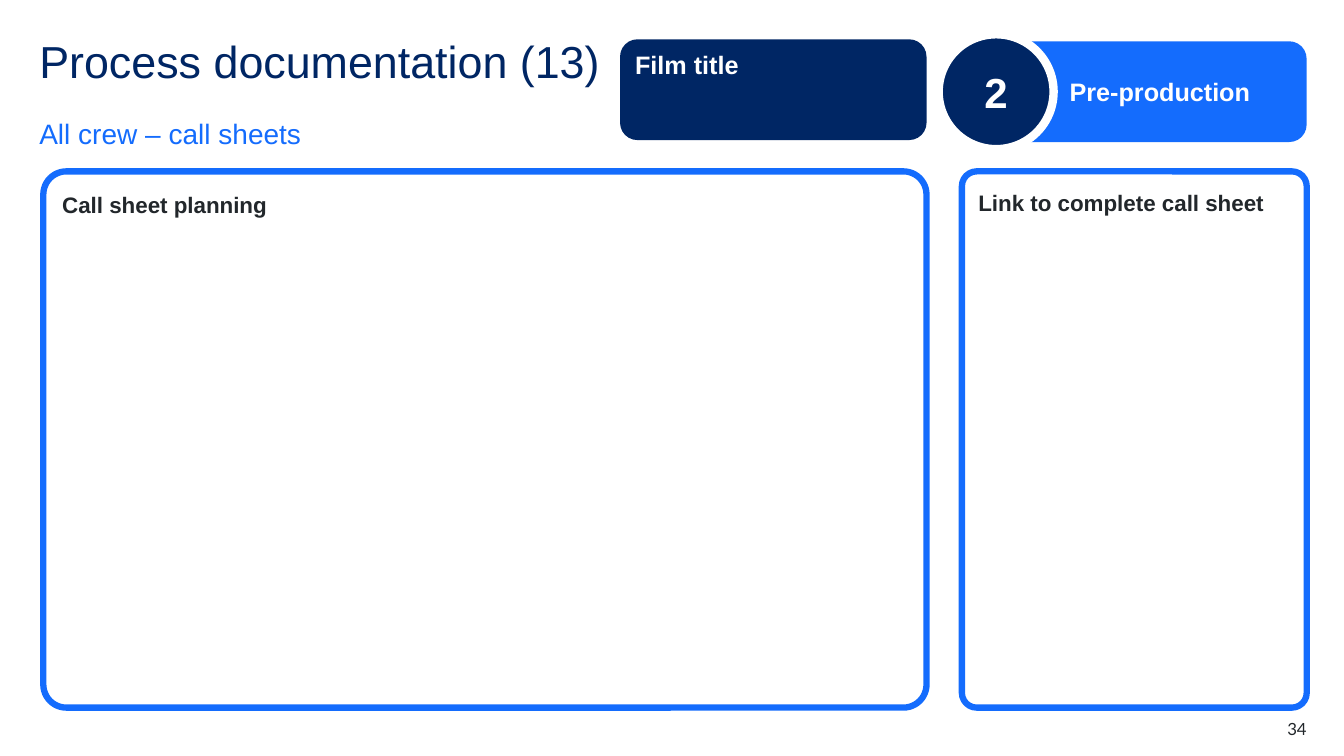
from pptx import Presentation
from pptx.dml.color import RGBColor
from pptx.enum.shapes import MSO_SHAPE
from pptx.enum.text import MSO_ANCHOR, PP_ALIGN
from pptx.util import Inches, Pt

# Content
TITLE = "Process documentation (13)"
SUBTITLE = "All crew – call sheets"
FILM = "Film title"
STAGE_NUMBER, STAGE = "2", "Pre-production"
PAGE = "34"
COLORS = {"navy": "002664", "blue": "146CFD", "ink": "22272B", "white": "FFFFFF"}

# Layout, in inches
WIDTH, HEIGHT = 13.33, 7.5
LEFT, RIGHT, TOP = 0.39, 12.96, 0.39
HEADING_W, BANNER_H = 5.63, 1
FILM_LEFT, FILM_RIGHT = 6.15, 9.19
STAGE_LEFT, STAGE_TOP = 10.06, 0.41
BADGE_LEFT, BADGE_SIZE = 9.31, 1.14
PANEL_TOP, PANEL_H = 1.7, 5.32
BANNER_ROUND, PANEL_ROUND = 0.173, 0.043
PANELS = [  # heading, left edge, right edge
    ("Call sheet planning", 0.43, FILM_RIGHT),
    ("Link to complete call sheet", 9.54, RIGHT),
]

prs = Presentation()
prs.slide_width, prs.slide_height = Inches(WIDTH), Inches(HEIGHT)
slide = prs.slides.add_slide(prs.slide_layouts[6])


def rgb(name):
    return RGBColor.from_string(COLORS[name])


def write(holder, text, size=18, color="white", bold=False, font="Arial",
          align=PP_ALIGN.LEFT, anchor=MSO_ANCHOR.TOP, inset=True,
          indent=0, spacing=None, before=0, after=0):
    frame = holder.text_frame
    frame.word_wrap = True
    frame.vertical_anchor = anchor
    if not inset:
        frame.margin_left = frame.margin_right = 0
        frame.margin_top = frame.margin_bottom = 0
    paragraph = frame.paragraphs[0]
    paragraph.alignment = align
    paragraph.line_spacing = spacing
    paragraph.space_before, paragraph.space_after = Pt(before), Pt(after)
    if indent:
        paragraph._p.get_or_add_pPr().set("marL", str(Inches(indent)))
    run = paragraph.add_run()
    run.text = text
    run.font.size, run.font.bold, run.font.name = Pt(size), bold, font
    run.font.color.rgb = rgb(color)


def text_area(left, top, width, height):
    return slide.shapes.add_textbox(*map(Inches, (left, top, width, height)))


def block(left, top, width, height, fill, rounding=None, line=None, line_width=0):
    kind = MSO_SHAPE.OVAL if rounding is None else MSO_SHAPE.ROUNDED_RECTANGLE
    shape = slide.shapes.add_shape(kind, *map(Inches, (left, top, width, height)))
    shape.shadow.inherit = False
    if rounding is not None:
        shape.adjustments[0] = rounding
    shape.fill.solid()
    shape.fill.fore_color.rgb = rgb(fill)
    if line:
        shape.line.color.rgb = rgb(line)
        shape.line.width = Pt(line_width)
    else:
        shape.line.fill.background()
    return shape


# Headings
write(text_area(LEFT, TOP, HEADING_W, 0.6), TITLE, size=32, color="navy",
      inset=False, spacing=0.9)
write(text_area(LEFT, 1.07, HEADING_W, 0.34), SUBTITLE, size=20, color="blue",
      inset=False, anchor=MSO_ANCHOR.MIDDLE, spacing=1.5, after=12)

# Film title banner
film = block(FILM_LEFT, TOP, FILM_RIGHT - FILM_LEFT, BANNER_H, "navy", BANNER_ROUND)
write(film, FILM, bold=True)

# Stage banner with its numbered badge
stage = block(STAGE_LEFT, STAGE_TOP, RIGHT - STAGE_LEFT, BANNER_H, "blue", BANNER_ROUND)
write(stage, STAGE, bold=True, anchor=MSO_ANCHOR.MIDDLE, indent=0.4)
badge_top = STAGE_TOP + (BANNER_H - BADGE_SIZE) / 2
badge = block(BADGE_LEFT, badge_top, BADGE_SIZE, BADGE_SIZE, "navy",
              line="white", line_width=6)
write(badge, STAGE_NUMBER, size=30, bold=True, align=PP_ALIGN.CENTER,
      anchor=MSO_ANCHOR.MIDDLE)

# Panels
for heading, left, right in PANELS:
    panel = block(left, PANEL_TOP, right - left, PANEL_H, "white", PANEL_ROUND,
                  line="blue", line_width=4.5)
    write(panel, heading, size=16, color="ink", bold=True, inset=False,
          indent=0.12, spacing=1.5, before=6, after=6)

# Page number
write(text_area(RIGHT - 0.79, 7.13, 0.79, 0.2), PAGE, size=12, color="ink",
      font="Lato", align=PP_ALIGN.RIGHT, inset=False)

prs.save("out.pptx")
